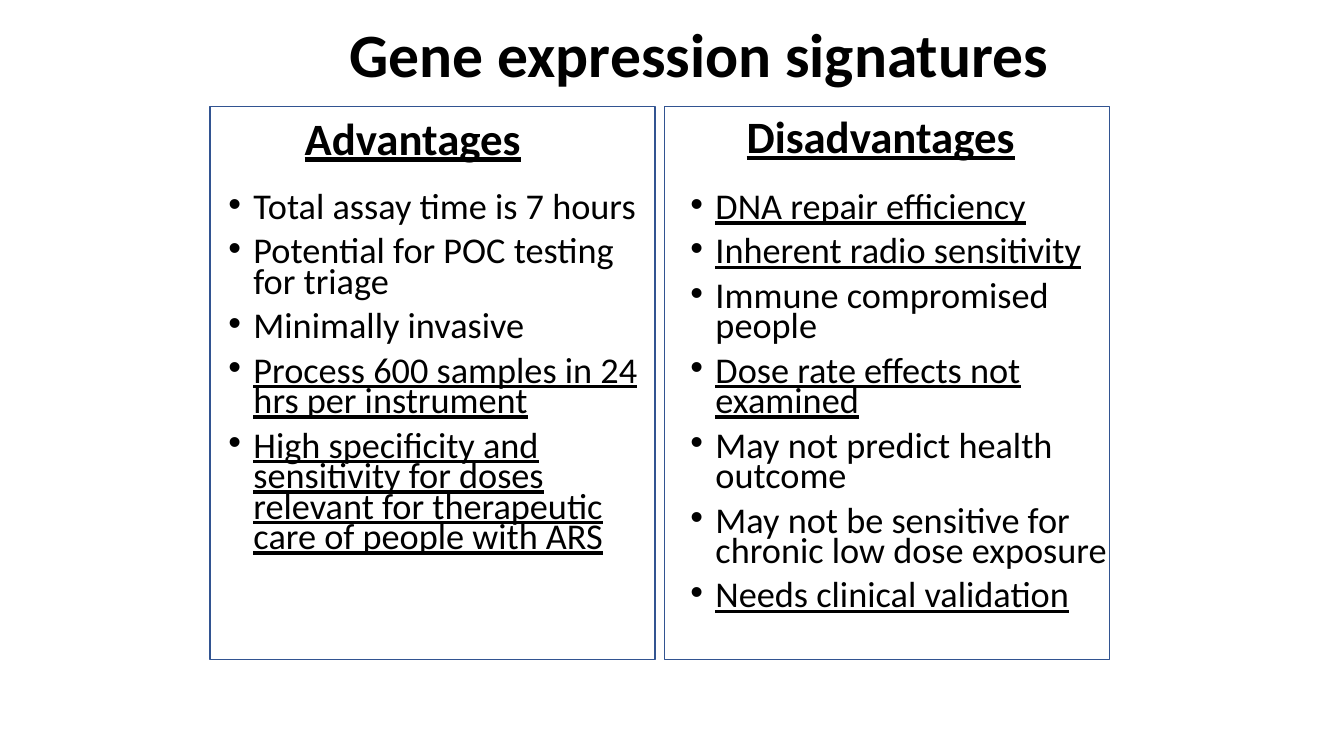
from lxml.etree import SubElement
from pptx import Presentation
from pptx.dml.color import RGBColor
from pptx.enum.shapes import MSO_SHAPE as Preset
from pptx.enum.text import MSO_ANCHOR as Anchor, MSO_AUTO_SIZE as AutoSize, PP_ALIGN as Align
from pptx.oxml.ns import qn
from pptx.util import Inches, Pt

COLORS = {"text": "000000", "frame": "325491"}
FONT = "Calibri"
COLUMNS, ROWS = 160, 90
CELL = Inches(7.5) / ROWS
PANEL_WIDTH = 53
BULLET_INDENT = 3

# Lefts and indents are in grid columns, tops in grid rows.
# Each bullet is its wording and whether it is underlined.
PANELS = [
    {
        "frame_left": 25, "list_left": 26,
        "heading": "Advantages", "heading_left": 29, "heading_top": 11.8, "heading_indent": 6.1,
        "bullets": [
            ("Total assay time is 7 hours", False),
            ("Potential for POC testing for triage", False),
            ("Minimally invasive", False),
            ("Process 600 samples in 24 hrs per instrument", True),
            ("High specificity and sensitivity for doses relevant for "
             "therapeutic care of people with ARS", True),
        ],
    },
    {
        "frame_left": 79.1, "list_left": 81,
        "heading": "Disadvantages", "heading_left": 80.5, "heading_top": 11.6, "heading_indent": 7.2,
        "bullets": [
            ("DNA repair efficiency", True),
            ("Inherent radio sensitivity", True),
            ("Immune compromised people", False),
            ("Dose rate effects not examined", True),
            ("May not predict health outcome", False),
            ("May not be sensitive for chronic low dose exposure", False),
            ("Needs clinical validation", True),
        ],
    },
]


def grid(cells):
    return round(cells * CELL)


def add_run(paragraph, text, size, bold=False, underline=False):
    run = paragraph.add_run()
    run.text = text
    font = run.font
    font.name, font.size, font.bold, font.underline = FONT, Pt(size), bold, underline
    font.color.rgb = RGBColor.from_string(COLORS["text"])


def format_paragraph(paragraph, line_spacing, space_before=0):
    paragraph.alignment = Align.LEFT
    paragraph.line_spacing = line_spacing
    paragraph.space_before = Pt(space_before)


def indent(paragraph, left, first_line=0):
    properties = paragraph._p.get_or_add_pPr()
    properties.set("marL", str(grid(left)))
    properties.set("indent", str(grid(first_line)))
    return properties


def add_text_frame(slide, left, top, height, anchor):
    box = slide.shapes.add_textbox(grid(left), grid(top), grid(PANEL_WIDTH), grid(height))
    frame = box.text_frame
    frame.word_wrap = True
    frame.vertical_anchor = anchor
    return frame


def set_title(slide, text):
    title = slide.shapes.title
    title.left, title.top, title.width, title.height = map(grid, (40.4, -0.6, 108, 15))
    frame = title.text_frame
    frame.auto_size = AutoSize.NONE
    frame.vertical_anchor = Anchor.MIDDLE
    paragraph = frame.paragraphs[0]
    format_paragraph(paragraph, 0.9)
    add_run(paragraph, text, 44, bold=True)


def add_heading(slide, text, left, top, left_indent):
    paragraph = add_text_frame(slide, left, top, 8.4, Anchor.BOTTOM).paragraphs[0]
    format_paragraph(paragraph, 0.9, 10)
    indent(paragraph, left_indent)
    add_run(paragraph, text, 32, bold=True, underline=True)


def add_bullets(slide, bullets, left):
    frame = add_text_frame(slide, left, 22.6, 51.8, Anchor.TOP)
    for index, (text, underline) in enumerate(bullets):
        paragraph = frame.add_paragraph() if index else frame.paragraphs[0]
        format_paragraph(paragraph, 0.7, 10)
        properties = indent(paragraph, BULLET_INDENT, -BULLET_INDENT)
        SubElement(properties, qn("a:buFont")).set("typeface", "Arial")
        SubElement(properties, qn("a:buChar")).set("char", "•")
        add_run(paragraph, text, 25.9, underline=underline)


def add_frame(slide, left):
    frame = slide.shapes.add_shape(
        Preset.RECTANGLE, grid(left), grid(12.7), grid(PANEL_WIDTH), grid(65.8))
    frame.shadow.inherit = False
    frame.fill.background()
    frame.line.color.rgb = RGBColor.from_string(COLORS["frame"])
    frame.line.width = Pt(1)


def main():
    presentation = Presentation()
    presentation.slide_width, presentation.slide_height = grid(COLUMNS), grid(ROWS)
    slide = presentation.slides.add_slide(presentation.slide_layouts.get_by_name("Title Only"))
    set_title(slide, "Gene expression signatures")
    for panel in PANELS:
        add_heading(slide, panel["heading"], panel["heading_left"],
                    panel["heading_top"], panel["heading_indent"])
        add_bullets(slide, panel["bullets"], panel["list_left"])
        add_frame(slide, panel["frame_left"])
    presentation.save("out.pptx")


if __name__ == "__main__":
    main()
